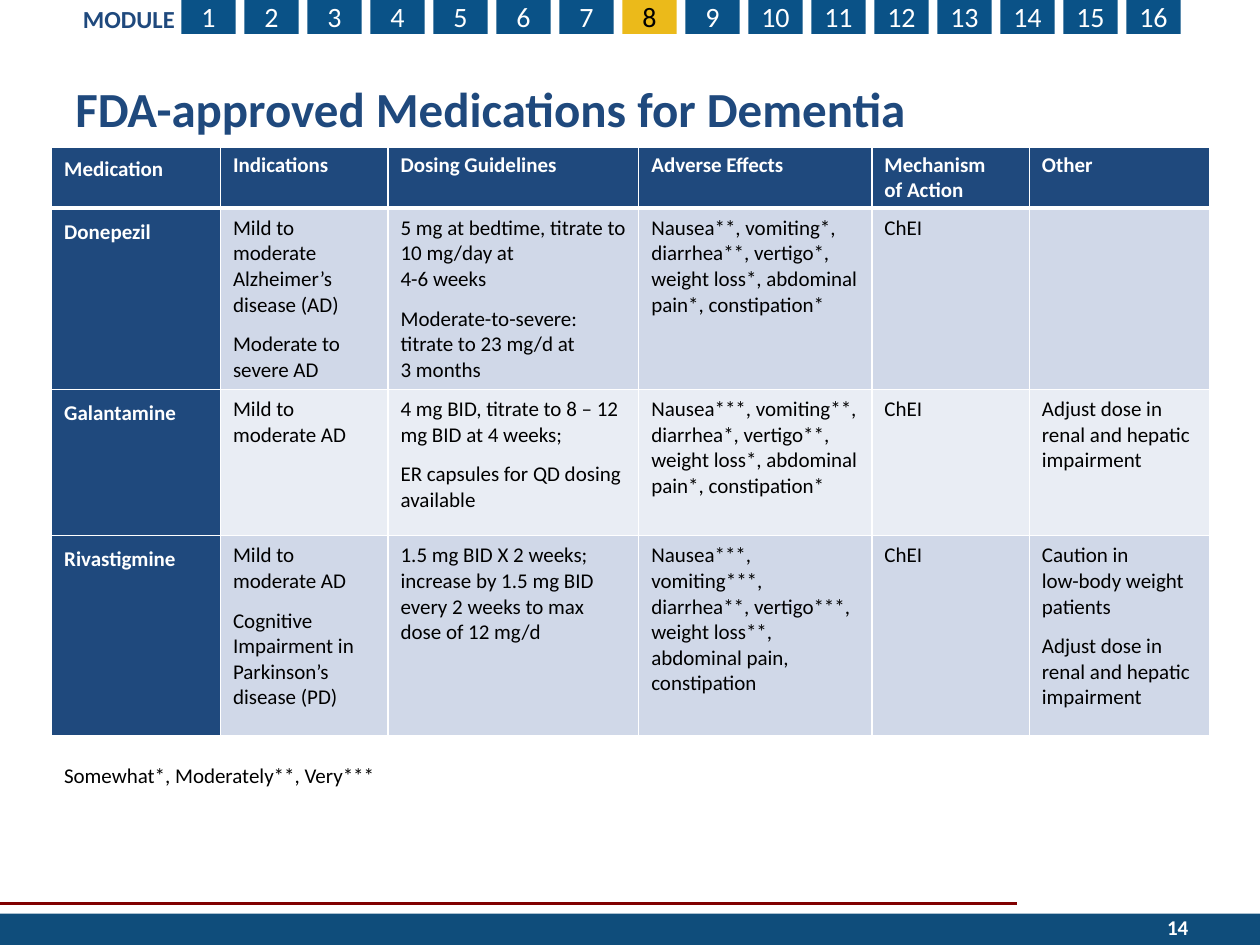
from pptx import Presentation
from pptx.dml.color import RGBColor as RGB
from pptx.enum.shapes import MSO_CONNECTOR as Link, MSO_SHAPE as Shape
from pptx.enum.text import MSO_ANCHOR as Anchor, PP_ALIGN as Align
from pptx.oxml import parse_xml
from pptx.oxml.ns import nsdecls
from pptx.util import Inches, Pt

NAVY = RGB(0x1F, 0x49, 0x7D)
BLUE = RGB(0x0A, 0x52, 0x87)
BAR = RGB(0x0F, 0x4D, 0x7B)
GOLD = RGB(0xEB, 0xBA, 0x1A)
RED = RGB(0x80, 0x00, 0x00)
DARK = RGB(0xD0, 0xD8, 0xE8)
PALE = RGB(0xE9, 0xED, 0xF4)
WHITE = RGB(0xFF, 0xFF, 0xFF)
BLACK = RGB(0x00, 0x00, 0x00)

COLS = [1.34, 1.33, 1.99, 1.85, 1.25, 1.43]
ROWS = [0.48, 1.44, 1.16, 1.59]
DRUGS = [
    ["Medication", "Indications", "Dosing Guidelines", "Adverse Effects",
     "Mechanism\vof Action", "Other"],
    ["Donepezil",
     "Mild to moderate Alzheimer’s disease (AD)\nModerate to severe AD",
     "5 mg at bedtime, titrate to 10 mg/day at\v4-6 weeks\n"
     "Moderate-to-severe: titrate to 23 mg/d at\v3 months",
     "Nausea**, vomiting*, diarrhea**, vertigo*, weight loss*, "
     "abdominal pain*, constipation*",
     "ChEI", ""],
    ["Galantamine",
     "Mild to moderate AD",
     "4 mg BID, titrate to 8 – 12 mg BID at 4 weeks;\n"
     "ER capsules for QD dosing available",
     "Nausea***, vomiting**, diarrhea*, vertigo**, weight loss*, "
     "abdominal pain*, constipation*",
     "ChEI",
     "Adjust dose in renal and hepatic impairment"],
    ["Rivastigmine",
     "Mild to moderate AD\n"
     "Cognitive Impairment in Parkinson’s disease (PD)",
     "1.5 mg BID X 2 weeks; increase by 1.5 mg BID every 2 weeks "
     "to max dose of 12 mg/d",
     "Nausea***, vomiting***, diarrhea**, vertigo***, weight loss**, "
     "abdominal pain, constipation",
     "ChEI",
     "Caution in\vlow-body weight patients\n"
     "Adjust dose in renal and hepatic impairment"],
]


class Deck:
    face = "Calibri"

    def __init__(self, wide, high):
        self.show = Presentation()
        self.show.slide_width = Inches(wide)
        self.show.slide_height = Inches(high)
        self.slide = self.show.slides.add_slide(self.show.slide_layouts[6])

    def label(self, frame, words, size, color, bold=False, align=Align.LEFT):
        frame.text = words
        for para in frame.paragraphs:
            para.alignment = align
            font = para.font
            font.name, font.size, font.bold = self.face, Pt(size), bold
            font.color.rgb = color

    def text(self, box, words, size, color, bold=False, align=Align.LEFT,
             anchor=Anchor.TOP):
        frame = self.slide.shapes.add_textbox(*map(Inches, box)).text_frame
        frame.word_wrap = True
        frame.vertical_anchor = anchor
        self.label(frame, words, size, color, bold, align)

    def rect(self, box, fill):
        shape = self.slide.shapes.add_shape(Shape.RECTANGLE,
                                            *map(Inches, box))
        shape.shadow.inherit = False
        shape.fill.solid()
        shape.fill.fore_color.rgb = fill
        shape.line.fill.background()
        return shape

    def tab(self, box, words, fill, color):
        frame = self.rect(box, fill).text_frame
        frame.margin_left = frame.margin_right = 0
        frame.margin_top = frame.margin_bottom = 0
        frame.vertical_anchor = Anchor.MIDDLE
        self.label(frame, words, 16, color, align=Align.CENTER)

    def line(self, ends, color, width):
        line = self.slide.shapes.add_connector(Link.STRAIGHT,
                                               *map(Inches, ends))
        line.line.color.rgb = color
        line.line.width = Pt(width)
        line._element.spPr.append(
            parse_xml(f"<a:effectLst {nsdecls('a')}/>"))

    def edge(self, cell, top, base):
        props = cell._tc.get_or_add_tcPr()
        for side, width in zip("LRTB", (1, 1, top, base)):
            props.append(parse_xml(
                f'<a:ln{side} {nsdecls("a")} w="{Pt(width)}"><a:solidFill>'
                f'<a:srgbClr val="{WHITE}"/></a:solidFill></a:ln{side}>'))

    def cell(self, cell, words, row, col):
        head = row == 0
        strong = head or col == 0
        self.edge(cell, 3 if row == 1 else 1, 3 if head else 1)
        cell.fill.solid()
        cell.fill.fore_color.rgb = NAVY if strong else (PALE, DARK)[row % 2]
        cell.margin_left = cell.margin_right = Inches(0.1)
        cell.margin_top = Inches(0.04 if head else 0.06)
        cell.margin_bottom = Inches(0.04 if head else 0)
        self.label(cell.text_frame, words, 12,
                   WHITE if strong else BLACK, strong)
        for para in cell.text_frame.paragraphs:
            para.space_after = Pt(8)
            if col == 0:
                para.line_spacing = 1.15

    def table(self, left, top, cols, rows, data):
        box = map(Inches, (left, top, sum(cols), sum(rows)))
        grid = self.slide.shapes.add_table(len(rows), len(cols), *box).table
        for col, width in zip(grid.columns, cols):
            col.width = Inches(width)
        for row, high in zip(grid.rows, rows):
            row.height = Inches(high)
        for row, line in enumerate(data):
            for col, words in enumerate(line):
                self.cell(grid.cell(row, col), words, row, col)


def main():
    deck = Deck(10, 7.5)
    deck.line((-0.01, 7.17, 8.07, 7.17), RED, 1.5)
    deck.rect((0, 7.25, 10, 0.25), BAR)
    deck.text((0.56, -0.02, 1.01, 0.34), "MODULE", 14, NAVY, True)
    for num in range(1, 17):
        fill, color = (GOLD, BLACK) if num == 8 else (BLUE, WHITE)
        deck.tab((0.94 + 0.5 * num, -0.01, 0.43, 0.28), str(num), fill, color)
    deck.text((7.2, 7.16, 2.33, 0.4), "14", 12, WHITE, True, Align.RIGHT,
              Anchor.MIDDLE)
    deck.text((0.5, 0.62, 9, 0.47), "FDA-approved Medications for Dementia",
              28, NAVY, True, anchor=Anchor.MIDDLE)
    deck.table(0.41, 1.17, COLS, ROWS, DRUGS)
    deck.text((0.41, 6, 4.09, 0.3), "Somewhat*, Moderately**, Very***",
              12, BLACK)
    deck.show.save("out.pptx")


if __name__ == "__main__":
    main()
